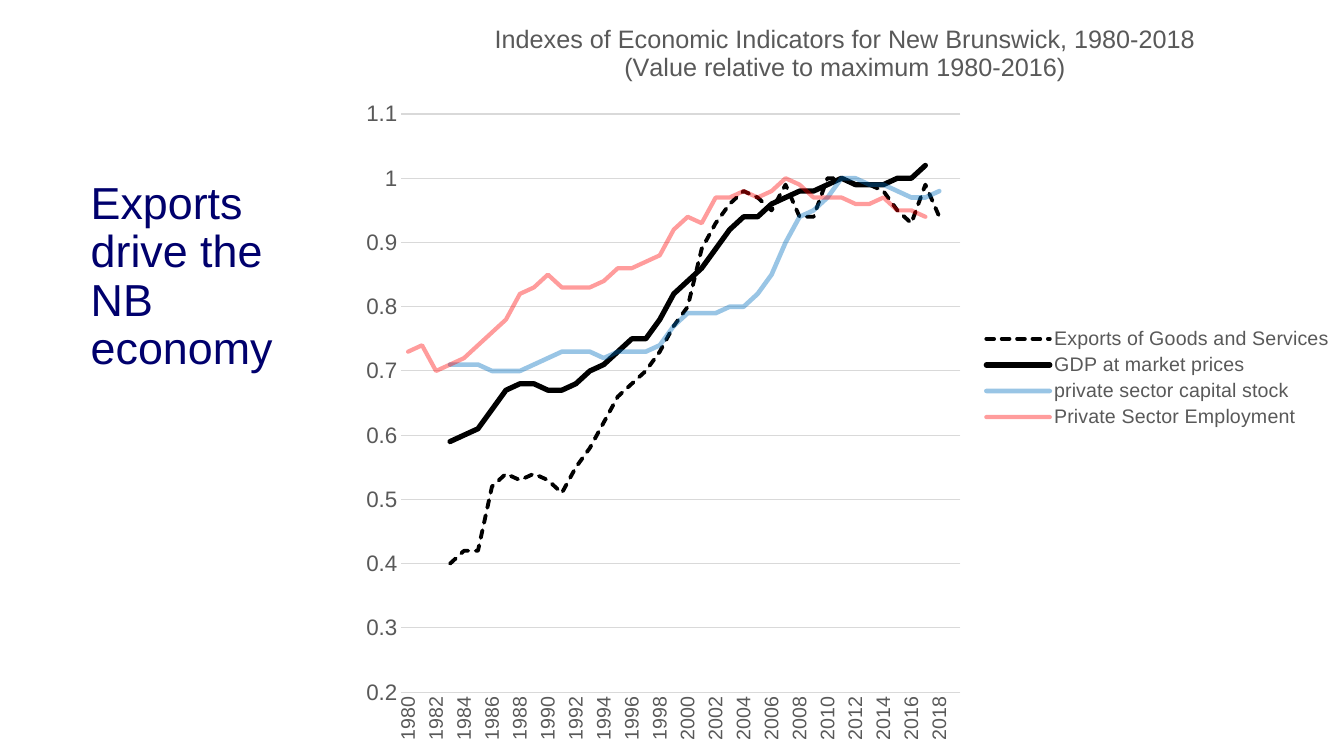
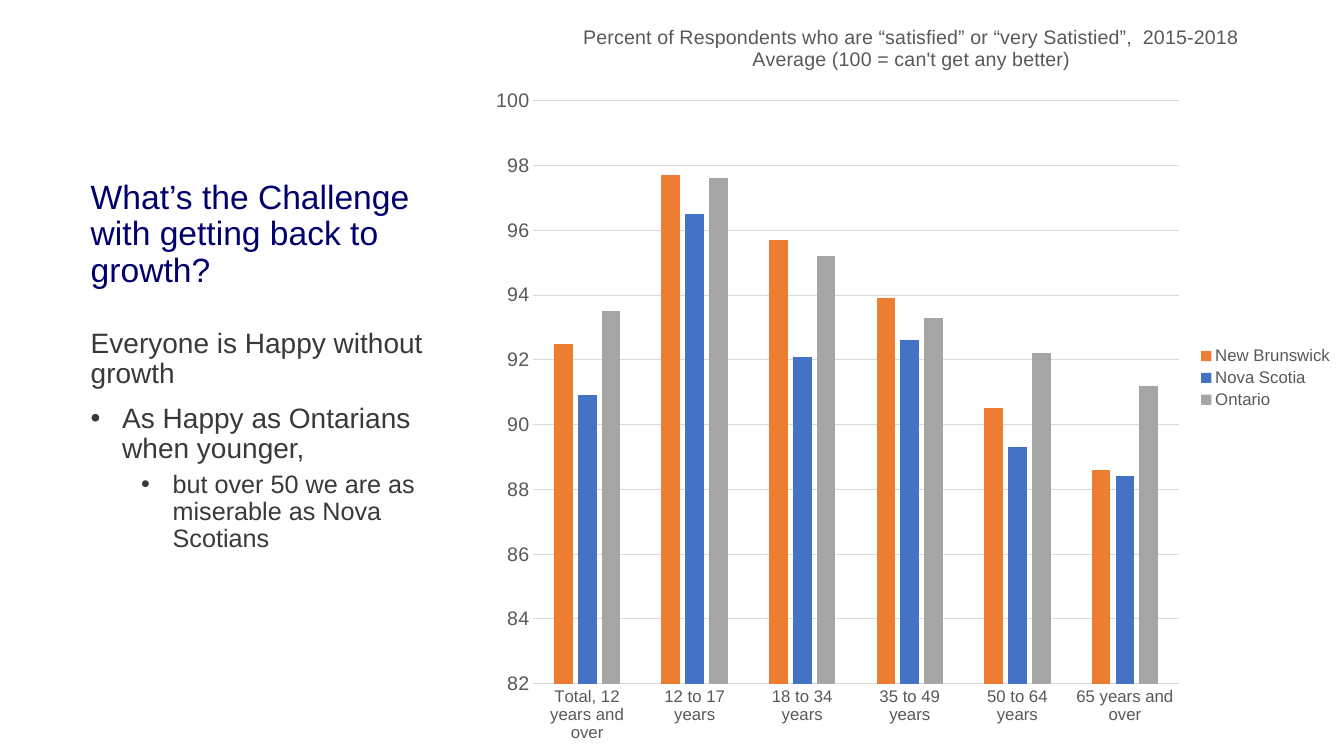
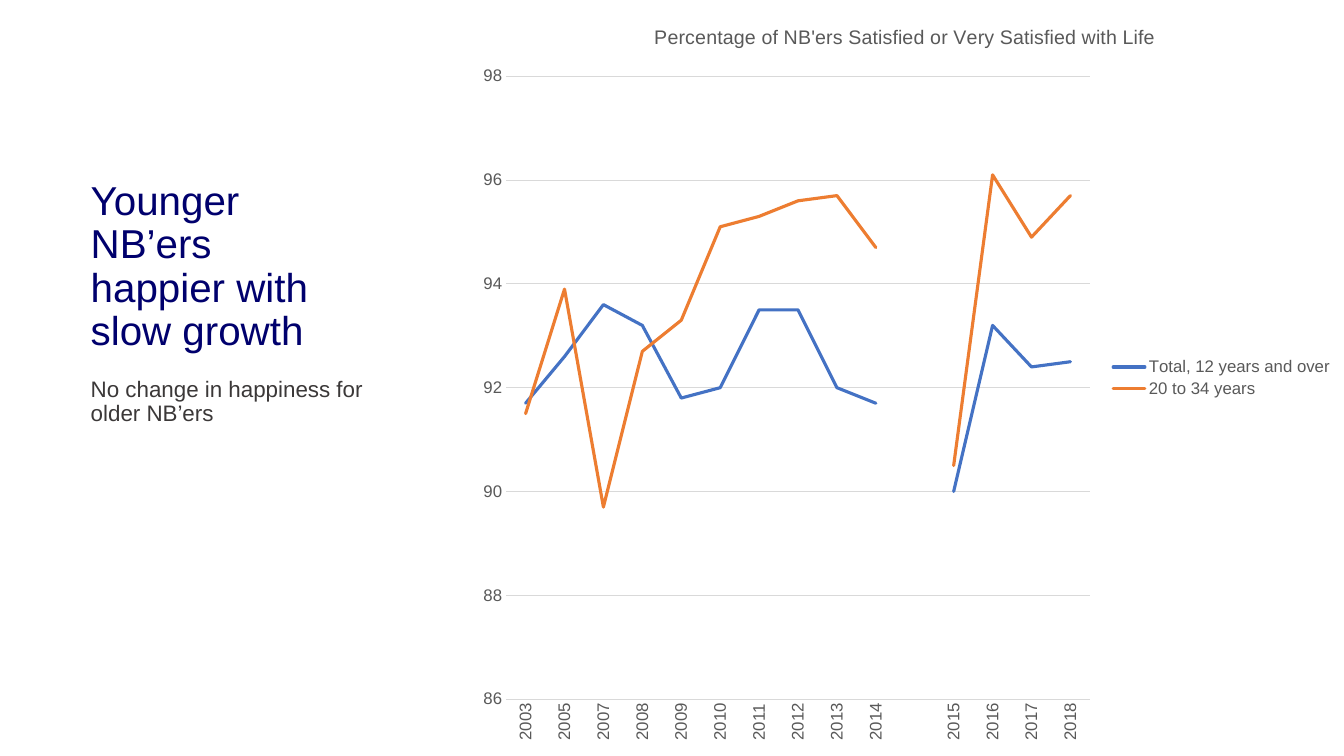
from pptx import Presentation, util as u
from pptx.chart.data import CategoryChartData
from pptx.dml import color
from pptx.enum import chart as ch, dml, text
from pptx.oxml import parse_xml, ns, xmlchemy

FONT = "Arial"
COLOURS = {
    "title": "00006D", "body": "3B3838", "label": "595959", "grid": "D9D9D9",
    "black": "000000", "capital": "0070C0", "jobs": "FF0000",
    "orange": "ED7D31", "blue": "4472C4", "grey": "A5A5A5",
}
TITLE_ONLY, TITLE_AND_BODY = 5, 1
LEFT, TITLE_TOP, SLIDE_HEIGHT = 57.6, 125.3, 540
FRAME_FORMAT = {"word_wrap": True, "auto_size": text.MSO_AUTO_SIZE.NONE,
                "vertical_anchor": text.MSO_ANCHOR.TOP}
BULLET_HANG = 22.5

YEARS = [str(year) for year in range(1980, 2020)]
INDICATORS = {
    "Exports of Goods and Services": [None] * 3 + [
        0.4, 0.42, 0.42, 0.52, 0.54, 0.53, 0.54, 0.53, 0.51, 0.55, 0.58, 0.62, 0.66,
        0.68, 0.7, 0.73, 0.77, 0.8, 0.89, 0.93, 0.96, 0.98, 0.97, 0.95, 0.99, 0.94,
        0.94, 1, 1, 0.99, 0.99, 0.98, 0.95, 0.93, 0.99, 0.94, None],
    "GDP at market prices": [None] * 3 + [
        0.59, 0.6, 0.61, 0.64, 0.67, 0.68, 0.68, 0.67, 0.67, 0.68, 0.7, 0.71, 0.73,
        0.75, 0.75, 0.78, 0.82, 0.84, 0.86, 0.89, 0.92, 0.94, 0.94, 0.96, 0.97, 0.98,
        0.98, 0.99, 1, 0.99, 0.99, 0.99, 1, 1, 1.02, None, None],
    "private sector capital stock": [None] * 3 + [
        0.71, 0.71, 0.71, 0.7, 0.7, 0.7, 0.71, 0.72, 0.73, 0.73, 0.73, 0.72, 0.73,
        0.73, 0.73, 0.74, 0.77, 0.79, 0.79, 0.79, 0.8, 0.8, 0.82, 0.85, 0.9, 0.94,
        0.95, 0.97, 1, 1, 0.99, 0.99, 0.98, 0.97, 0.97, 0.98, None],
    "Private Sector Employment": [
        0.73, 0.74, 0.7, 0.71, 0.72, 0.74, 0.76, 0.78, 0.82, 0.83, 0.85, 0.83, 0.83,
        0.83, 0.84, 0.86, 0.86, 0.87, 0.88, 0.92, 0.94, 0.93, 0.97, 0.97, 0.98, 0.97,
        0.98, 1, 0.99, 0.97, 0.97, 0.97, 0.96, 0.96, 0.97, 0.95, 0.95, 0.94, None, None],
}
AGES = ["Total, 12 years and over", "12 to 17 years", "18 to 34 years",
        "35 to 49 years", "50 to 64 years", "65 years and over"]
SATISFACTION = {
    "New Brunswick": [92.5, 97.7, 95.7, 93.9, 90.5, 88.6],
    "Nova Scotia": [90.9, 96.5, 92.1, 92.6, 89.3, 88.4],
    "Ontario": [93.5, 97.6, 95.2, 93.3, 92.2, 91.2],
}
SURVEYS = ["2003", "2005", "2007", "2008", "2009", "2010", "2011", "2012", "2013",
           "2014", "", "2015", "2016", "2017", "2018"]
LIFE = {
    "Total, 12 years and over": [91.7, 92.6, 93.6, 93.2, 91.8, 92, 93.5, 93.5, 92,
                                 91.7, None, 90, 93.2, 92.4, 92.5],
    "20 to 34 years": [91.5, 93.9, 89.7, 92.7, 93.3, 95.1, 95.3, 95.6, 95.7,
                       94.7, None, 90.5, 96.1, 94.9, 95.7],
}


def rgb(name):
    return color.RGBColor.from_string(COLOURS[name])


def apply(target, values):
    for name, value in values.items():
        setattr(target, name, value)


def style_font(font, size, colour):
    apply(font, {"name": FONT, "size": u.Pt(size), "bold": False})
    font.color.rgb = rgb(colour)


def style_line(line, colour, width):
    line.color.rgb = rgb(colour)
    line.width = u.Pt(width)


def place(shape, left, top, width, height):
    apply(shape, {"left": u.Pt(left), "top": u.Pt(top),
                  "width": u.Pt(width), "height": u.Pt(height)})


def write(para, words, size, colour, before=0):
    apply(para, {"alignment": text.PP_ALIGN.LEFT, "line_spacing": 0.9,
                 "space_before": u.Pt(before)})
    span = para.add_run()
    span.text = words
    style_font(span.font, size, colour)


def set_bullet(para, indent):
    """Give the paragraph a hanging bullet, or none when indent is None."""
    props = para._p.get_or_add_pPr()
    hang = 0 if indent is None else BULLET_HANG
    props.set("marL", str(int(u.Pt(indent or 0))))
    props.set("indent", str(int(u.Pt(-hang))))
    if indent is None:
        props.append(xmlchemy.OxmlElement("a:buNone"))
        return
    for tag, key, value in (("a:buFont", "typeface", FONT), ("a:buChar", "char", "•")):
        mark = xmlchemy.OxmlElement(tag)
        mark.set(key, value)
        props.append(mark)


def add_page(deck, layout, title, size, width, height):
    page = deck.slides.add_slide(deck.slide_layouts[layout])
    box = page.shapes.title
    place(box, LEFT, TITLE_TOP, width, height)
    apply(box.text_frame, FRAME_FORMAT)
    write(box.text_frame.paragraphs[0], title, size, "title")
    return page


def fill_body(page, top, width, height, items):
    """Items are (words, size, level, bullet indent or None)."""
    box = page.placeholders[1]
    place(box, LEFT, top, width, height)
    apply(box.text_frame, FRAME_FORMAT)
    for number, (words, size, level, indent) in enumerate(items):
        para = box.text_frame.add_paragraph() if number else box.text_frame.paragraphs[0]
        para.level = level
        write(para, words, size, "body", before=5 if level else 10)
        set_bullet(para, indent)


def set_plot_area(chart, frame, plot):
    """Fix the inner plot area, given like the frame in slide points."""
    left, top, width, height = frame
    parts = {"x": (plot[0] - left) / width, "y": (plot[1] - top) / height,
             "w": plot[2] / width, "h": plot[3] / height}
    modes = '<c:xMode val="edge"/><c:yMode val="edge"/>'
    sizes = "".join(f'<c:{key} val="{value:.4f}"/>' for key, value in parts.items())
    area = chart.element.xpath(".//c:plotArea")[0]
    for old in area.xpath("./c:layout"):
        area.remove(old)
    area.insert(0, parse_xml(
        f'<c:layout {ns.nsdecls("c")}><c:manualLayout><c:layoutTarget val="inner"/>'
        f'{modes}{sizes}</c:manualLayout></c:layout>'))


def set_chart_title(chart, lines, size):
    chart.has_title = True
    frame = chart.chart_title.text_frame
    for number, words in enumerate(lines):
        para = frame.add_paragraph() if number else frame.paragraphs[0]
        span = para.add_run()
        span.text = words
        style_font(span.font, size, "label")


def style_axes(chart, sizes, scale, rotated):
    category, value = chart.category_axis, chart.value_axis
    for axis, size in zip((category, value), sizes):
        axis.major_tick_mark = axis.minor_tick_mark = ch.XL_TICK_MARK.NONE
        style_font(axis.tick_labels.font, size, "label")
    style_line(category.format.line, "grid", 0.75)
    value.format.line.fill.background()
    style_line(value.major_gridlines.format.line, "grid", 0.75)
    apply(value, dict(zip(("minimum_scale", "maximum_scale", "major_unit"), scale)))
    if rotated:
        body = chart.element.xpath(".//c:catAx/c:txPr/a:bodyPr")[0]
        body.set("rot", "-5400000")
        body.set("vert", "horz")


def add_chart(page, kind, frame, plot, data, title, sizes, scale, rotated=True):
    """Sizes are those of the title, category labels, value labels and legend."""
    categories, rows = data
    chart_data = CategoryChartData()
    chart_data.categories = categories
    for name, values in rows.items():
        chart_data.add_series(name, values)
    chart = page.shapes.add_chart(kind, *map(u.Pt, frame), chart_data).chart
    style_font(chart.font, 10, "black")
    set_chart_title(chart, title, sizes[0])
    style_axes(chart, sizes[1:3], scale, rotated)
    chart.has_legend = True
    apply(chart.legend, {"position": ch.XL_LEGEND_POSITION.RIGHT,
                         "include_in_layout": False})
    style_font(chart.legend.font, sizes[3], "label")
    set_plot_area(chart, frame, plot)
    chart.plots[0].vary_by_categories = False
    return chart


def style_curve(series, colour, width, dash=None, opacity=None):
    series.smooth = False
    series.marker.style = ch.XL_MARKER_STYLE.NONE
    line = series.format.line
    style_line(line, colour, width)
    if dash:
        line.dash_style = dash
    outline = series.format.element.xpath("./c:spPr/a:ln")[0] if hasattr(
        series.format, "element") else series._element.xpath("./c:spPr/a:ln")[0]
    outline.set("cap", "rnd")
    if opacity:
        alpha = xmlchemy.OxmlElement("a:alpha")
        alpha.set("val", str(opacity * 1000))
        outline.xpath(".//a:srgbClr")[0].append(alpha)


def add_exports_page(deck):
    page = add_page(deck, TITLE_ONLY, "Exports drive the NB economy", 32, 169.2, 184.3)
    chart = add_chart(
        page, ch.XL_CHART_TYPE.LINE, (247, 0, 713, SLIDE_HEIGHT), (286.5, 81.5, 399.5, 413),
        (YEARS, INDICATORS),
        ["Indexes of Economic Indicators for New Brunswick, 1980-2018",
         "(Value relative to maximum 1980-2016)"],
        (18, 14, 16, 14), (0.2, 1.1, 0.1))
    curves = [("black", 2.75, dml.MSO_LINE.SQUARE_DOT), ("black", 3.75),
              ("capital", 3.25, None, 40), ("jobs", 3, None, 39)]
    for series, curve in zip(chart.series, curves):
        style_curve(series, *curve)


def add_challenge_page(deck):
    page = add_page(deck, TITLE_AND_BODY,
                    "What’s the Challenge with getting back to growth?", 24, 284.4, 77.8)
    fill_body(page, 231.8, 284.4, 224.6, [
        ("Everyone is Happy without growth", 20, 0, None),
        ("As Happy as Ontarians when younger,", 20, 0, BULLET_HANG),
        ("but over 50 we are as miserable as Nova Scotians", 18, 1, 58.5)])
    chart = add_chart(
        page, ch.XL_CHART_TYPE.COLUMN_CLUSTERED, (342, 0, 618, SLIDE_HEIGHT),
        (381, 72, 461, 416.5), (AGES, SATISFACTION),
        ["Percent of Respondents who are “satisfied” or “very Satistied”,  2015-2018 "
         "Average (100 = can't get any better)"],
        (14, 12, 14, 12), (82, 100, 2), rotated=False)
    apply(chart.plots[0], {"gap_width": 219, "overlap": -27})
    for series, colour in zip(chart.series, ("orange", "blue", "grey")):
        series.format.fill.solid()
        series.format.fill.fore_color.rgb = rgb(colour)


def add_younger_page(deck):
    page = add_page(deck, TITLE_AND_BODY,
                    "Younger NB’ers happier with slow growth", 28.8, 170.6, 77.8)
    fill_body(page, 266.4, 244.1, 190.1,
              [("No change in happiness for older NB’ers", 16, 0, None)])
    chart = add_chart(
        page, ch.XL_CHART_TYPE.LINE, (333, 0, 627, SLIDE_HEIGHT), (361.5, 54.5, 417, 445),
        (SURVEYS, LIFE), ["Percentage of NB'ers Satisfied or Very Satisfied with Life"],
        (14, 12, 12, 12), (86, 98, 2))
    for series, colour in zip(chart.series, ("blue", "orange")):
        style_curve(series, colour, 2.25)


def main():
    deck = Presentation()
    apply(deck, {"slide_width": u.Pt(960), "slide_height": u.Pt(SLIDE_HEIGHT)})
    add_exports_page(deck)
    add_challenge_page(deck)
    add_younger_page(deck)
    deck.save("out.pptx")


if __name__ == "__main__":
    main()
